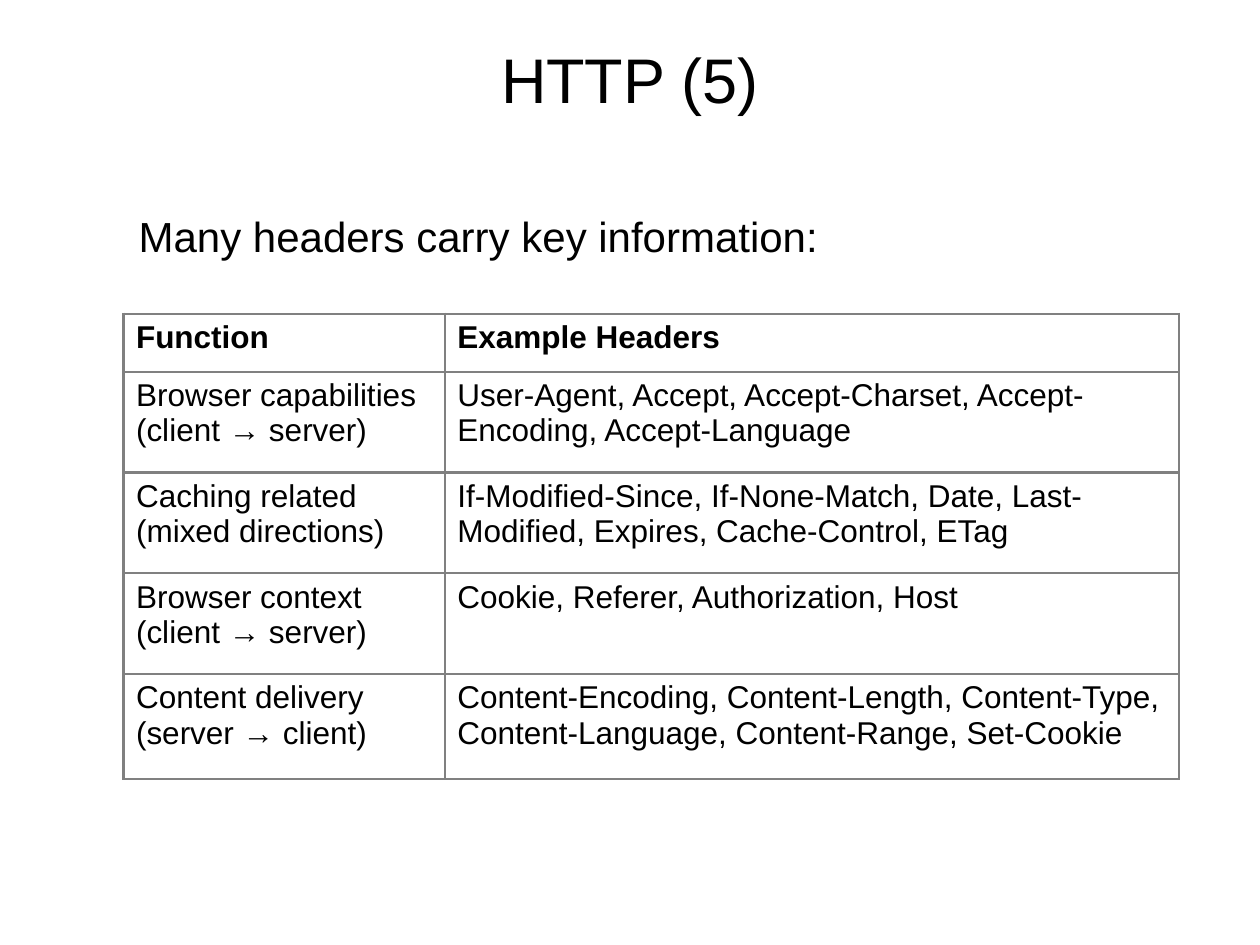
from lxml.etree import SubElement
from pptx import Presentation
from pptx.dml.color import RGBColor
from pptx.enum.text import MSO_ANCHOR, MSO_AUTO_SIZE, PP_ALIGN
from pptx.oxml.ns import qn
from pptx.util import Inches, Pt

BLACK = RGBColor(0, 0, 0)
WHITE = RGBColor(255, 255, 255)
GRAY = RGBColor(128, 128, 128)
FONT = "Arial"

TITLE_BOX = (0, 0, 10, 1.25)
BODY_BOX = (1, 1.62, 8.52, 5.03)
TABLE_BOX = (0.98, 2.49, 8.38, 3.69)
COLUMN_WIDTHS = (2.55, 5.83)
ROW_HEIGHTS = (0.46, 0.8, 0.8, 0.8, 0.83)
HEADER_ROWS = (
    ("Function", "Example Headers"),
    ("Browser capabilities\n(client → server)",
     "User-Agent, Accept, Accept-Charset, Accept-Encoding, Accept-Language"),
    ("Caching related\n(mixed directions)",
     "If-Modified-Since, If-None-Match, Date, Last-Modified, Expires, Cache-Control, ETag"),
    ("Browser context\n(client → server)",
     "Cookie, Referer, Authorization, Host"),
    ("Content delivery\n(server → client)",
     "Content-Encoding, Content-Length, Content-Type, Content-Language, "
     "Content-Range, Set-Cookie"),
)


def format_text(text_frame, size, bold=False):
    """Apply the slide's font to every run."""
    for paragraph in text_frame.paragraphs:
        for run in paragraph.runs:
            run.font.name = FONT
            run.font.size = Pt(size)
            run.font.bold = bold
            run.font.color.rgb = BLACK


def place_text(shape, box, text, size):
    """Fill a placeholder with text and fit it to the box."""
    shape.left, shape.top, shape.width, shape.height = map(Inches, box)
    text_frame = shape.text_frame
    text_frame.text = text
    text_frame.word_wrap = True
    text_frame.auto_size = MSO_AUTO_SIZE.NONE
    format_text(text_frame, size)
    return text_frame


def add_title(slide, box):
    """Place the centred slide title."""
    text_frame = place_text(slide.shapes.title, box, "HTTP (5)", 36)
    text_frame.vertical_anchor = MSO_ANCHOR.MIDDLE
    text_frame.paragraphs[0].alignment = PP_ALIGN.CENTER


def add_body(slide, box):
    """Place the introductory line without a bullet."""
    text_frame = place_text(
        slide.placeholders[1], box, "Many headers carry key information:", 24)
    paragraph = text_frame.paragraphs[0]
    paragraph.space_before = Pt(18)
    properties = paragraph._p.get_or_add_pPr()
    properties.set("marL", "0")
    properties.set("indent", "0")
    SubElement(properties, qn("a:buNone"))


def add_borders(cell, color, width):
    """Draw all four borders of a cell, ahead of its fill."""
    properties = cell._tc.get_or_add_tcPr()
    for position, side in enumerate(("lnL", "lnR", "lnT", "lnB")):
        line = SubElement(properties, qn(f"a:{side}"), w=str(Pt(width)))
        fill = SubElement(line, qn("a:solidFill"))
        SubElement(fill, qn("a:srgbClr"), val=str(color))
        properties.insert(position, line)


def add_header_table(slide, box):
    """Place the table of HTTP header groups."""
    table = slide.shapes.add_table(
        len(ROW_HEIGHTS), len(COLUMN_WIDTHS), *map(Inches, box)).table
    table.horz_banding = False
    for column, width in zip(table.columns, COLUMN_WIDTHS):
        column.width = Inches(width)
    for index, (row, height, texts) in enumerate(
            zip(table.rows, ROW_HEIGHTS, HEADER_ROWS)):
        row.height = Inches(height)
        for cell, text in zip(row.cells, texts):
            cell.text_frame.text = text
            format_text(cell.text_frame, 18, bold=index == 0)
            cell.fill.solid()
            cell.fill.fore_color.rgb = WHITE
            add_borders(cell, GRAY, 1.5)


def main():
    """Build and save the presentation."""
    presentation = Presentation()
    presentation.slide_width = Inches(10)
    presentation.slide_height = Inches(7.5)
    slide = presentation.slides.add_slide(presentation.slide_layouts[1])
    slide.background.fill.solid()
    slide.background.fill.fore_color.rgb = WHITE
    add_title(slide, TITLE_BOX)
    add_body(slide, BODY_BOX)
    add_header_table(slide, TABLE_BOX)
    presentation.save("out.pptx")


if __name__ == "__main__":
    main()
